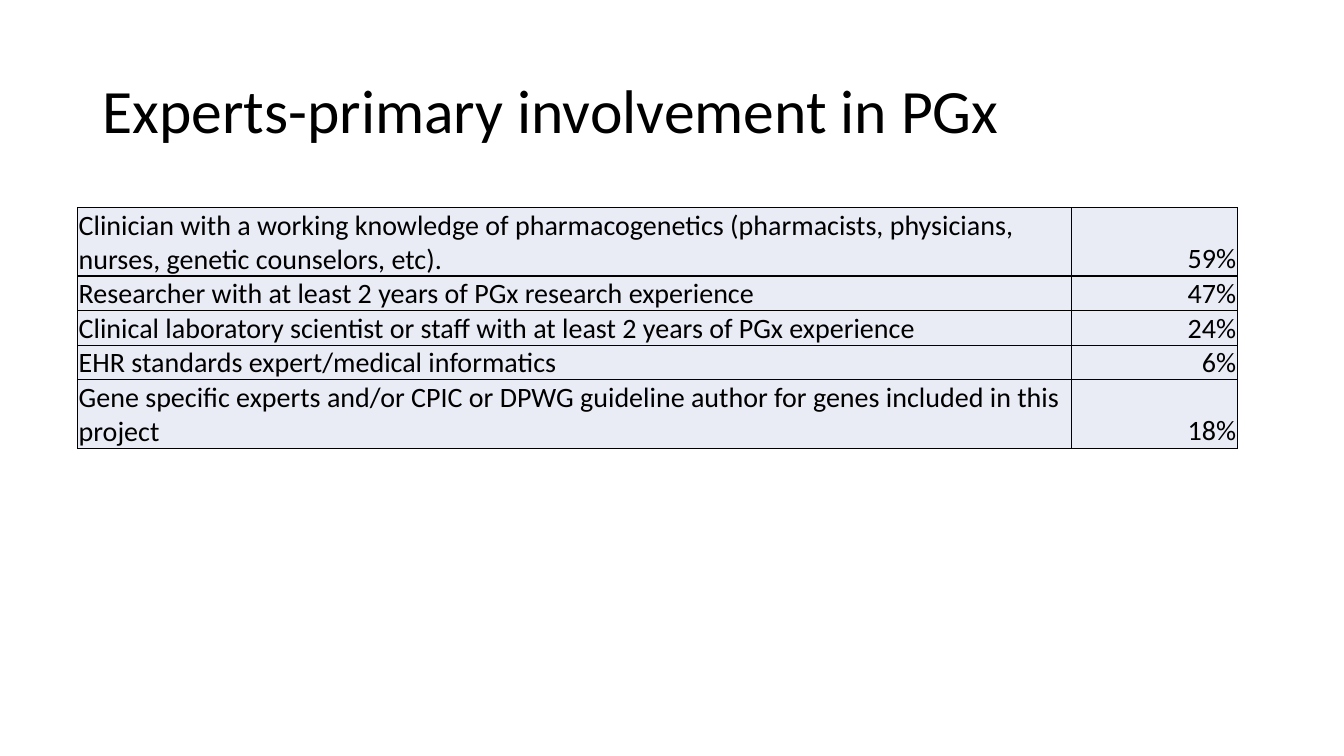
from typing import NamedTuple

from lxml.etree import SubElement
from pptx import Presentation
from pptx.dml.color import RGBColor
from pptx.enum.text import MSO_ANCHOR, PP_ALIGN
from pptx.oxml.ns import qn
from pptx.slide import Slide
from pptx.table import _Cell
from pptx.text.text import _Paragraph
from pptx.util import Emu, Inches, Pt

SLIDE_WIDTH = Inches(13.33)
SLIDE_HEIGHT = Inches(7.5)
BLANK_LAYOUT = 6

BLACK = RGBColor(0x00, 0x00, 0x00)
PALE_BLUE = RGBColor(0xE9, 0xEB, 0xF5)
FONT = "Calibri"
TITLE_SIZE = Pt(44)
TABLE_SIZE = Pt(20)
BORDER_WIDTH = Pt(1)
CELL_INSET = Inches(0.01)

TITLE = "Experts-primary involvement in PGx"


class Area(NamedTuple):
    """A rectangle in percent of the slide's width and height."""

    left: float
    top: float
    width: float
    height: float


class Involvement(NamedTuple):
    role: str
    share: str


TITLE_AREA = Area(6.9, 5.33, 86.27, 19.33)
ROLE_WIDTH = 73.97
SHARE_WIDTH = 12.3
ROW_HEIGHT = 3.33

INVOLVEMENTS = [
    Involvement(
        "Clinician with a working knowledge of pharmacogenetics "
        "(pharmacists, physicians, nurses, genetic counselors, etc).",
        "59%",
    ),
    Involvement("Researcher with at least 2 years of PGx research experience", "47%"),
    Involvement(
        "Clinical laboratory scientist or staff with at least 2 years of PGx experience",
        "24%",
    ),
    Involvement("EHR standards expert/medical informatics", "6%"),
    Involvement(
        "Gene specific experts and/or CPIC or DPWG guideline author "
        "for genes included in this project",
        "18%",
    ),
]
TABLE_AREA = Area(
    5.78, 27.47, ROLE_WIDTH + SHARE_WIDTH, ROW_HEIGHT * len(INVOLVEMENTS)
)


def across(percent: float) -> Emu:
    return Emu(round(SLIDE_WIDTH * percent / 100))


def down(percent: float) -> Emu:
    return Emu(round(SLIDE_HEIGHT * percent / 100))


def place(area: Area) -> tuple[Emu, Emu, Emu, Emu]:
    """Turn an area into left, top, width and height on the slide."""
    return across(area.left), down(area.top), across(area.width), down(area.height)


def write(para: _Paragraph, text: str, size: Pt) -> None:
    para.text = text
    for span in para.runs:
        span.font.name = FONT
        span.font.size = size
        span.font.bold = False
        span.font.color.rgb = BLACK


def add_title(page: Slide) -> None:
    box = page.shapes.add_textbox(*place(TITLE_AREA))
    box.text_frame.word_wrap = True
    box.text_frame.vertical_anchor = MSO_ANCHOR.MIDDLE
    para = box.text_frame.paragraphs[0]
    write(para, TITLE, TITLE_SIZE)
    para.line_spacing = 0.9


def add_borders(cell: _Cell) -> None:
    properties = cell._tc.get_or_add_tcPr()
    for side in ("a:lnL", "a:lnR", "a:lnT", "a:lnB"):
        line = SubElement(properties, qn(side), w=str(BORDER_WIDTH))
        fill = SubElement(line, qn("a:solidFill"))
        SubElement(fill, qn("a:srgbClr"), val=str(BLACK))


def fill_cell(cell: _Cell, text: str, alignment: PP_ALIGN) -> None:
    add_borders(cell)
    cell.fill.solid()
    cell.fill.fore_color.rgb = PALE_BLUE
    cell.vertical_anchor = MSO_ANCHOR.BOTTOM
    cell.margin_left = cell.margin_right = cell.margin_top = CELL_INSET
    cell.margin_bottom = 0
    para = cell.text_frame.paragraphs[0]
    write(para, text, TABLE_SIZE)
    para.alignment = alignment


def add_involvement_table(page: Slide) -> None:
    frame = page.shapes.add_table(len(INVOLVEMENTS), 2, *place(TABLE_AREA))
    table = frame.table
    table.first_row = False
    table.horz_banding = False
    table.columns[0].width = across(ROLE_WIDTH)
    table.columns[1].width = across(SHARE_WIDTH)
    for index, involvement in enumerate(INVOLVEMENTS):
        fill_cell(table.cell(index, 0), involvement.role, PP_ALIGN.LEFT)
        fill_cell(table.cell(index, 1), involvement.share, PP_ALIGN.RIGHT)


def main() -> None:
    deck = Presentation()
    deck.slide_width = SLIDE_WIDTH
    deck.slide_height = SLIDE_HEIGHT
    page = deck.slides.add_slide(deck.slide_layouts[BLANK_LAYOUT])
    add_title(page)
    add_involvement_table(page)
    deck.save("out.pptx")


if __name__ == "__main__":
    main()
